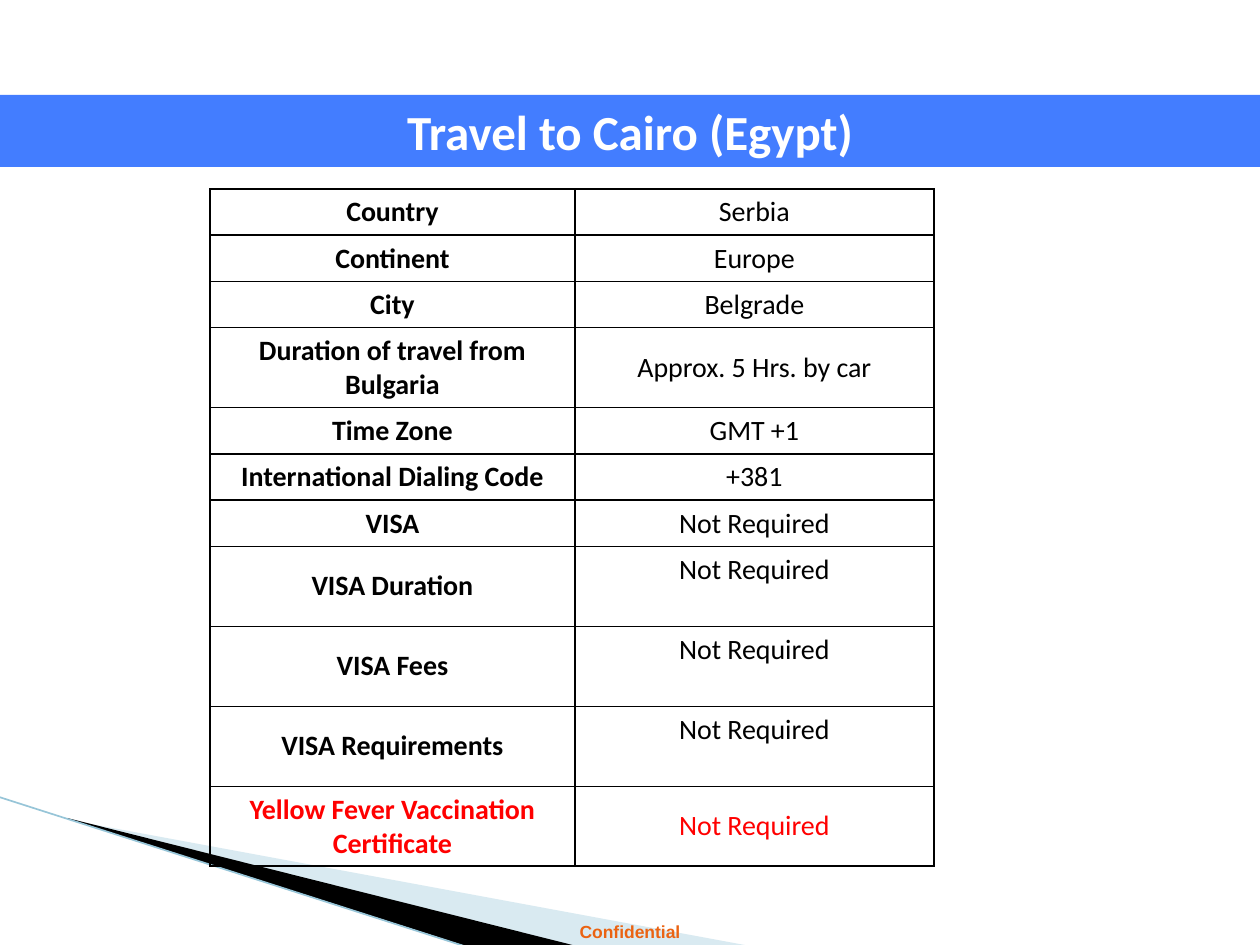
from lxml import etree
from pptx import Presentation
from pptx import util as u
from pptx.dml import color
from pptx.enum import shapes, text
from pptx.oxml import ns

PX = 914400 // 126
BLACK, RED = "000000", "FF0000"
LINE, DOUBLE = 46, 80
MIDDLE, TOP = text.MSO_ANCHOR.MIDDLE, text.MSO_ANCHOR.TOP

FACTS = [
    ("Country", "Serbia", LINE, MIDDLE, BLACK),
    ("Continent", "Europe", LINE, MIDDLE, BLACK),
    ("City", "Belgrade", LINE, MIDDLE, BLACK),
    ("Duration of travel from Bulgaria", "Approx. 5 Hrs. by car", DOUBLE, MIDDLE, BLACK),
    ("Time Zone", "GMT +1", LINE, MIDDLE, BLACK),
    ("International Dialing Code", "+381", LINE, MIDDLE, BLACK),
    ("VISA", "Not Required", LINE, MIDDLE, BLACK),
    ("VISA Duration", "Not Required", DOUBLE, TOP, BLACK),
    ("VISA Fees", "Not Required", DOUBLE, TOP, BLACK),
    ("VISA Requirements", "Not Required", DOUBLE, TOP, BLACK),
    ("Yellow Fever Vaccination Certificate", "Not Required", DOUBLE, MIDDLE, RED),
]


def rgb(value):
    return color.RGBColor.from_string(value)


def add_element(parent, tag, **attributes):
    return etree.SubElement(parent, ns.qn(tag), attributes)


class TravelSlide:
    """Holds the slide and its text style, and adds each kind of element."""

    def __init__(self, deck, font):
        self.slide = deck.slides.add_slide(deck.slide_layouts[5])
        self.font = font

    def add_words(self, frame, words, size, ink, bold=True, font=None):
        paragraph = frame.paragraphs[0]
        paragraph.alignment = text.PP_ALIGN.CENTER
        run = paragraph.add_run()
        run.text = words
        run.font.name = font or self.font
        run.font.size = u.Pt(size)
        run.font.bold = bold
        run.font.color.rgb = rgb(ink)

    def title(self, words, box, fill):
        banner = self.slide.shapes.title
        banner.left, banner.top, banner.width, banner.height = [n * PX for n in box]
        banner.fill.solid()
        banner.fill.fore_color.rgb = rgb(fill)
        banner.text_frame.auto_size = text.MSO_AUTO_SIZE.NONE
        banner.text_frame.vertical_anchor = MIDDLE
        self.add_words(banner.text_frame, words, 28, "FFFFFF")

    def wedge(self, points, fill, opacity=100):
        builder = self.slide.shapes.build_freeform(*points[0], scale=PX)
        builder.add_line_segments(points[1:], close=True)
        wedge = builder.convert_to_shape()
        wedge.shadow.inherit = False
        wedge.line.fill.background()
        wedge.fill.solid()
        wedge.fill.fore_color.rgb = rgb(fill)
        if opacity < 100:
            tint = wedge._element.spPr.find(ns.qn("a:solidFill"))[0]
            add_element(tint, "a:alpha", val=str(opacity * 1000))

    def line(self, start, end, ink, width):
        edge = self.slide.shapes.add_connector(
            shapes.MSO_CONNECTOR.STRAIGHT, *[n * PX for n in start + end])
        edge.line.color.rgb = rgb(ink)
        edge.line.width = u.Pt(width)
        add_element(edge._element.spPr, "a:effectLst")

    def label(self, words, box, size, ink, font):
        frame = self.slide.shapes.add_textbox(*[n * PX for n in box]).text_frame
        frame.word_wrap = True
        self.add_words(frame, words, size, ink, font=font)

    def border(self, cell):
        properties = cell._tc.get_or_add_tcPr()
        for position, side in enumerate(("a:lnL", "a:lnR", "a:lnT", "a:lnB")):
            edge = etree.Element(ns.qn(side), w=str(u.Pt(1)))
            ink = add_element(edge, "a:solidFill")
            add_element(ink, "a:srgbClr", val=BLACK)
            properties.insert(position, edge)

    def table(self, left, top, widths, facts):
        height = sum(fact[2] for fact in facts)
        frame = self.slide.shapes.add_table(
            len(facts), len(widths), left * PX, top * PX, sum(widths) * PX, height * PX)
        grid = frame.table
        grid.first_row = grid.horz_banding = False
        for column, width in zip(grid.columns, widths):
            column.width = width * PX
        for row, (topic, answer, height, anchor, ink) in zip(grid.rows, facts):
            row.height = height * PX
            entries = ((topic, True, MIDDLE), (answer, False, anchor))
            for cell, (words, bold, place) in zip(row.cells, entries):
                cell.fill.background()
                cell.vertical_anchor = place
                self.border(cell)
                self.add_words(cell.text_frame, words, 16, ink, bold)


def main():
    deck = Presentation()
    deck.slide_width, deck.slide_height = 1260 * PX, 945 * PX
    travel = TravelSlide(deck, "Calibri")
    travel.wedge([(69, 820), (750, 946), (575, 946), (69, 819)], "A0CBDC", 40)
    travel.wedge([(67, 818), (576, 946), (469, 947), (68, 819)], BLACK)
    travel.line((-1, 797), (467, 947), "97C5D8", 0.95)
    travel.label("Confidential", (0, 915, 1260, 34), 10, "EB6312", "Arial")
    travel.title("Travel to Cairo (Egypt)", (0, 95, 1260, 72), "437DFF")
    travel.table(210, 189, (365, 359), FACTS)
    deck.save("out.pptx")


if __name__ == "__main__":
    main()
